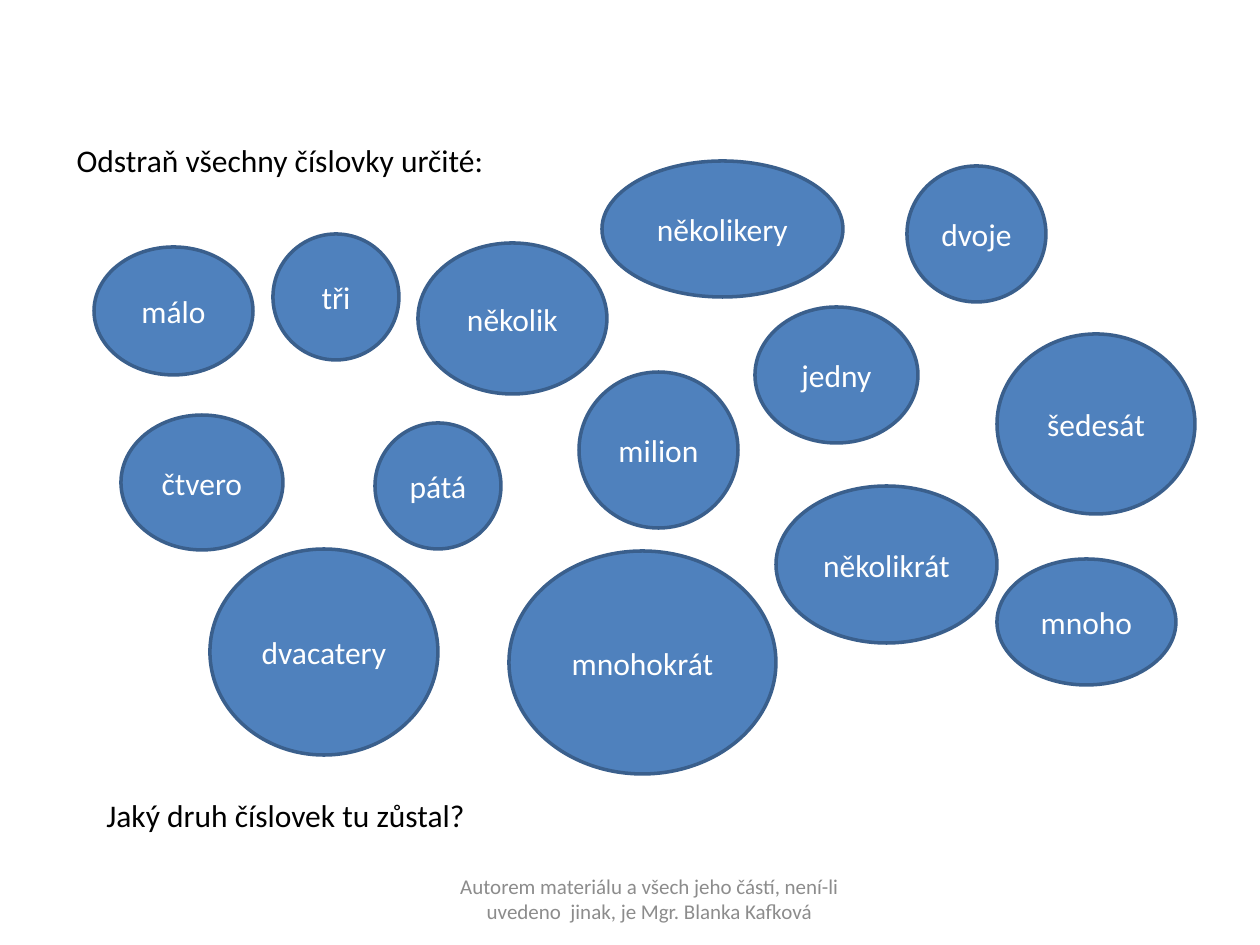
from typing import NamedTuple

from pptx import Presentation
from pptx.dml.color import RGBColor
from pptx.enum.shapes import MSO_SHAPE as Shape
from pptx.enum.text import MSO_ANCHOR as Anchor, MSO_AUTO_SIZE as AutoSize, PP_ALIGN as Align
from pptx.util import Pt

EMU_PER_PX = 914400 / 126
FONT = "Calibri"
BLACK, WHITE, GREY = "000000", "FFFFFF", "8C8C8C"
FILL, OUTLINE = "4F81BD", "3A5F8C"


class Box(NamedTuple):
    x: int
    y: int
    w: int
    h: int


class Bubble(NamedTuple):
    word: str
    box: Box


BUBBLES = [
    Bubble("pátá", Box(375, 423, 126, 126)),
    Bubble("tři", Box(273, 234, 126, 126)),
    Bubble("mnohokrát", Box(509, 551, 267, 223)),
    Bubble("mnoho", Box(997, 559, 179, 126)),
    Bubble("dvacatery", Box(210, 549, 228, 206)),
    Bubble("milion", Box(579, 372, 159, 156)),
    Bubble("čtvero", Box(121, 415, 162, 135)),
    Bubble("několik", Box(418, 243, 189, 151)),
    Bubble("několikrát", Box(776, 486, 221, 157)),
    Bubble("několikery", Box(602, 161, 241, 136)),
    Bubble("málo", Box(94, 247, 159, 128)),
    Bubble("šedesát", Box(997, 334, 198, 180)),
    Bubble("jedny", Box(755, 307, 163, 136)),
    Bubble("dvoje", Box(907, 166, 139, 136)),
]


def px(value: int) -> int:
    return round(value * EMU_PER_PX)


def rgb(value: str) -> RGBColor:
    return RGBColor.from_string(value)


def write(sp, text: str, color: str, size: int = 18, align=Align.LEFT, **frame) -> None:
    """Fill a shape with one paragraph; frame holds text frame settings."""
    tf = sp.text_frame
    for name, value in frame.items():
        setattr(tf, name, value)
    p = tf.paragraphs[0]
    p.alignment = align
    r = p.add_run()
    r.text = text
    for name, value in {"name": FONT, "size": Pt(size)}.items():
        setattr(r.font, name, value)
    r.font.color.rgb = rgb(color)


def add_text(s, box: Box, text: str, color: str, **style) -> None:
    sp = s.shapes.add_textbox(*map(px, box))
    write(sp, text, color, **style)


def add_bubble(s, bubble: Bubble) -> None:
    sp = s.shapes.add_shape(Shape.OVAL, *map(px, bubble.box))
    sp.shadow.inherit = False
    sp.fill.solid()
    sp.fill.fore_color.rgb = rgb(FILL)
    sp.line.color.rgb = rgb(OUTLINE)
    sp.line.width = Pt(2)
    write(sp, bubble.word, WHITE, align=Align.CENTER,
          word_wrap=True, vertical_anchor=Anchor.MIDDLE)


def set_title(s, box: Box, text: str) -> None:
    title = s.shapes.title
    for name, value in zip(("left", "top", "width", "height"), box):
        setattr(title, name, px(value))
    write(title, text, BLACK, word_wrap=False,
          auto_size=AutoSize.NONE, vertical_anchor=Anchor.TOP)


def main() -> None:
    prs = Presentation()
    prs.slide_width, prs.slide_height = px(1260), px(945)
    s = prs.slides.add_slide(prs.slide_layouts.get_by_name("Title Only"))
    set_title(s, Box(64, 135, 436, 89), "Odstraň všechny číslovky určité:")
    for bubble in BUBBLES:
        add_bubble(s, bubble)
    add_text(s, Box(94, 790, 388, 50), "Jaký druh číslovek tu zůstal?", BLACK,
             word_wrap=False, auto_size=AutoSize.SHAPE_TO_FIT_TEXT)
    add_text(s, Box(431, 870, 437, 57),
             "Autorem materiálu a všech jeho částí, není-li uvedeno  jinak, je Mgr. Blanka Kafková",
             GREY, size=12, align=Align.CENTER, word_wrap=True, vertical_anchor=Anchor.MIDDLE)
    prs.save("out.pptx")


if __name__ == "__main__":
    main()
